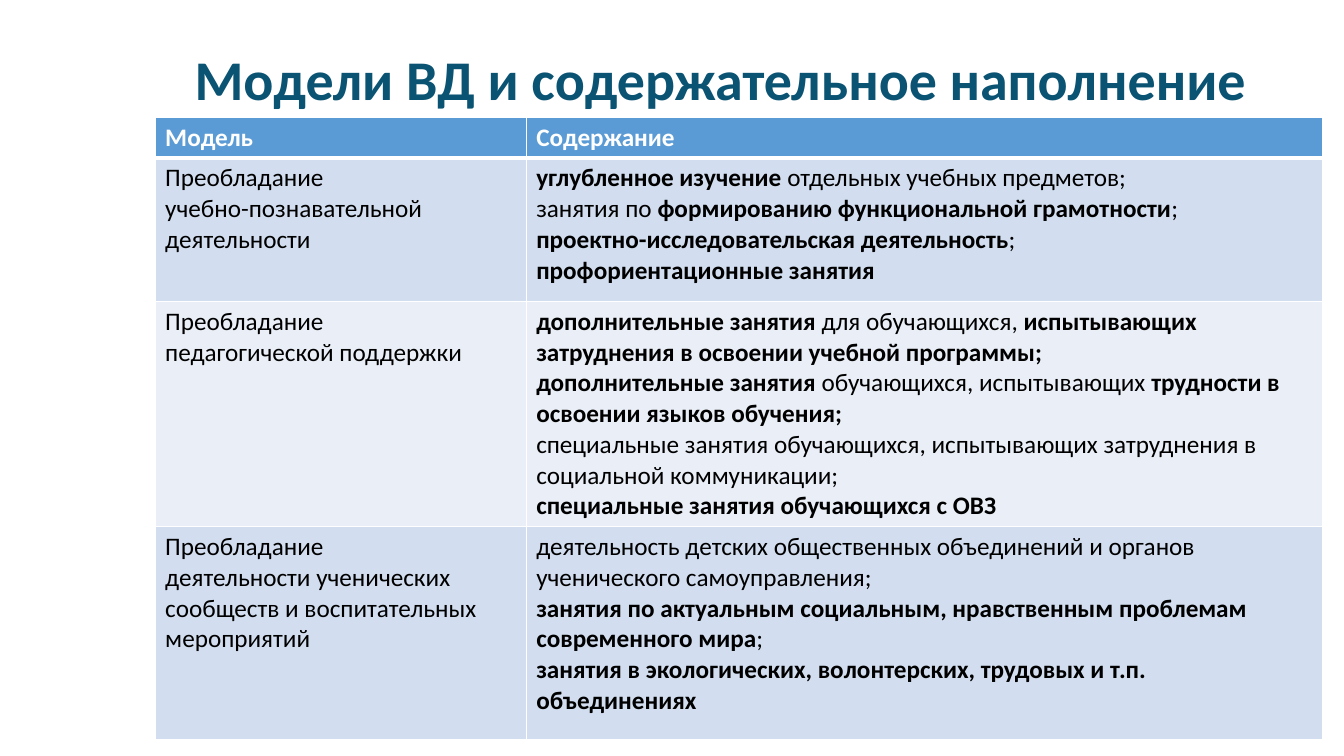
from lxml import etree
from pptx import Presentation
from pptx import util as u
from pptx.dml.color import RGBColor
from pptx.enum import text
from pptx.oxml import ns

FONT = "Calibri"
TEAL = RGBColor(0x0A, 0x53, 0x73)
BLUE = RGBColor(0x5B, 0x9B, 0xD5)
LIGHT_BLUE = RGBColor(0xD2, 0xDE, 0xEF)
PALE_BLUE = RGBColor(0xEA, 0xEF, 0xF7)
WHITE = RGBColor(0xFF, 0xFF, 0xFF)
BLACK = RGBColor(0x00, 0x00, 0x00)

TITLE = "Модели ВД и содержательное наполнение"
COLUMN_WIDTHS = (9.35, 20.07)
ROW_HEIGHTS = (1, 3.61, 5.36, 5.36)

# Each cell is a list of paragraphs; ** switches bold on and off.
ROWS = [
    (["**Модель**"], ["**Содержание**"]),
    (
        ["Преобладание", "учебно-познавательной деятельности"],
        [
            "**углубленное изучение **отдельных учебных предметов;",
            "занятия по **формированию функциональной грамотности**;",
            "**проектно-исследовательская деятельность**;",
            "**профориентационные занятия**",
        ],
    ),
    (
        ["Преобладание", "педагогической поддержки"],
        [
            "**дополнительные занятия** для обучающихся, "
            "**испытывающих затруднения в освоении учебной программы;**",
            "**дополнительные занятия **обучающихся, испытывающих "
            "**трудности в освоении языков обучения;**",
            "специальные занятия обучающихся, испытывающих затруднения "
            "в социальной коммуникации;",
            "**специальные занятия обучающихся с ОВЗ**",
        ],
    ),
    (
        ["Преобладание",
         "деятельности ученических сообществ и воспитательных мероприятий"],
        [
            "деятельность детских общественных объединений и органов "
            "ученического самоуправления;",
            "**занятия по актуальным социальным, нравственным проблемам "
            "современного мира**;",
            "**занятия в экологических, волонтерских, трудовых и т.п. "
            "объединениях**",
        ],
    ),
]


def write_text(frame, paragraphs, size=18, color=BLACK, line_spacing=None):
    """Fill a text frame, turning **marked** parts bold."""
    for index, content in enumerate(paragraphs):
        paragraph = frame.paragraphs[0] if index == 0 else frame.add_paragraph()
        paragraph.alignment = text.PP_ALIGN.LEFT
        paragraph.line_spacing = line_spacing
        for part_index, part in enumerate(content.split("**")):
            if part:
                run = paragraph.add_run()
                run.text = part
                run.font.name = FONT
                run.font.size = u.Pt(size)
                run.font.bold = part_index % 2 == 1
                run.font.color.rgb = color


def add_borders(cell, top=1, bottom=1):
    """Draw white cell borders; call before the cell gets its fill."""
    properties = cell._tc.get_or_add_tcPr()
    for side, width in (("L", 1), ("R", 1), ("T", top), ("B", bottom)):
        line = etree.SubElement(properties, ns.qn(f"a:ln{side}"), w=str(u.Pt(width)))
        fill = etree.SubElement(line, ns.qn("a:solidFill"))
        etree.SubElement(fill, ns.qn("a:srgbClr"), val=str(WHITE))


def format_title(title):
    title.left, title.top = u.Cm(4.65), u.Cm(0.23)
    title.width, title.height = u.Cm(28.22), u.Cm(3.68)
    frame = title.text_frame
    frame.auto_size = text.MSO_AUTO_SIZE.NONE
    frame.vertical_anchor = text.MSO_ANCHOR.MIDDLE
    write_text(frame, [f"**{TITLE}**"], size=40, color=TEAL, line_spacing=0.9)


def add_models_table(slide):
    table = slide.shapes.add_table(
        len(ROWS), len(COLUMN_WIDTHS), u.Cm(3.91), u.Cm(2.95),
        u.Cm(sum(COLUMN_WIDTHS)), u.Cm(sum(ROW_HEIGHTS)),
    ).table
    for column, width in zip(table.columns, COLUMN_WIDTHS):
        column.width = u.Cm(width)
    for row_index, (row, height) in enumerate(zip(table.rows, ROW_HEIGHTS)):
        row.height = u.Cm(height)
        is_header = row_index == 0
        band = LIGHT_BLUE if row_index % 2 else PALE_BLUE
        for cell, paragraphs in zip(row.cells, ROWS[row_index]):
            add_borders(cell, top=3 if row_index == 1 else 1,
                        bottom=3 if is_header else 1)
            cell.fill.solid()
            cell.fill.fore_color.rgb = BLUE if is_header else band
            write_text(cell.text_frame, paragraphs,
                       color=WHITE if is_header else BLACK)


def main():
    presentation = Presentation()
    presentation.slide_width = u.Cm(33.87)
    presentation.slide_height = u.Cm(19.05)
    slide = presentation.slides.add_slide(presentation.slide_layouts[5])
    format_title(slide.shapes.title)
    add_models_table(slide)
    presentation.save("out.pptx")


if __name__ == "__main__":
    main()
